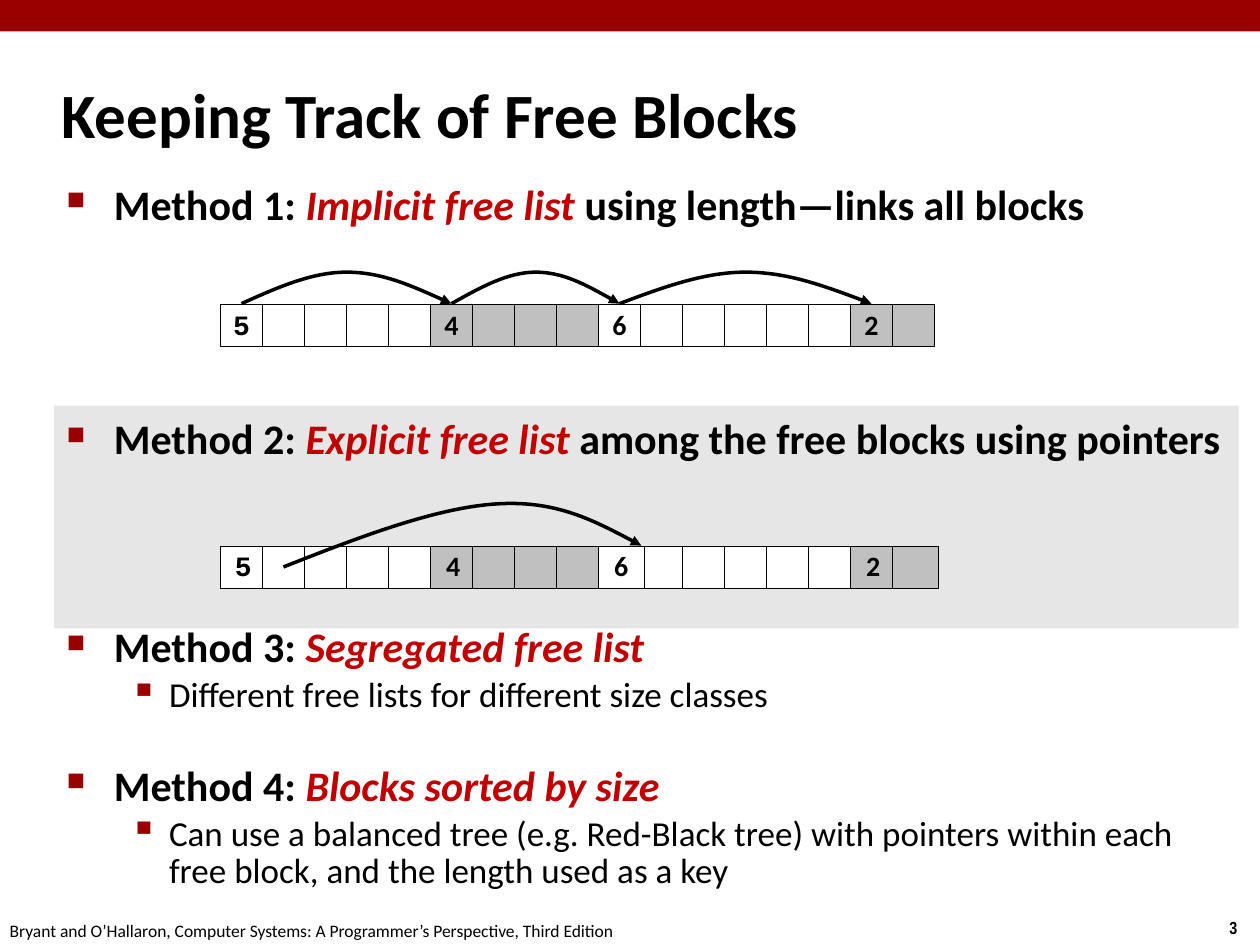
"""Build a slide on four ways of keeping track of free memory blocks."""
from lxml import etree
from pptx import Presentation
from pptx.dml.color import RGBColor
from pptx.enum.shapes import MSO_SHAPE
from pptx.enum.text import MSO_ANCHOR, MSO_AUTO_SIZE, PP_ALIGN
from pptx.oxml.ns import qn
from pptx.util import Pt

RECTANGLE = MSO_SHAPE.RECTANGLE
MIDDLE = MSO_ANCHOR.MIDDLE
NO_AUTOFIT = MSO_AUTO_SIZE.NONE
LEFT, CENTER = PP_ALIGN.LEFT, PP_ALIGN.CENTER

BLACK = RGBColor(0x00, 0x00, 0x00)
WHITE = RGBColor(0xFF, 0xFF, 0xFF)
GRAY = RGBColor(0xC0, 0xC0, 0xC0)
PANEL_GRAY = RGBColor(0xE6, 0xE6, 0xE6)
BAR_RED = RGBColor(0x99, 0x00, 0x00)
TERM_RED = RGBColor(0xC0, 0x00, 0x00)
FONT = "Calibri"

TITLE = "Keeping Track of Free Blocks"
FOOTER = "Bryant and O’Hallaron, Computer Systems: A Programmer’s Perspective, Third Edition"
PAGE_NUMBER = "3"

# level, space before, line spacing, (plain, term, plain)
POINTS = [
    (0, 0, 1, ("Method 1: ", "Implicit free list ", "using length—links all blocks")),
    (0, 105, 1, ("Method 2: ", "Explicit free list ", "among the free blocks using pointers")),
    (0, 95, 0.83, ("Method 3: ", "Segregated free list")),
    (1, 4, 0.88, ("Different free lists for different size classes",)),
    (0, 30, 0.83, ("Method 4: ", "Blocks sorted by size")),
    (1, 4, 0.88, ("Can use a balanced tree (e.g. Red-Black tree) with pointers within each "
                  "free block, and the length used as a key",)),
]
LEVELS = [
    {"size": 24, "bold": True, "bullet": "■", "scale": 60, "margin": 27, "hang": 27},
    {"size": 20, "bold": False, "bullet": "▪", "scale": 110, "margin": 58.5, "hang": 22.5},
]

BLOCKS = [(5, WHITE, "Courier New"), (4, GRAY, FONT), (6, WHITE, FONT), (2, GRAY, FONT)]
TOP_BLOCK = "6"
ROW_LEFT, CELL = 126, 24
IMPLICIT_TOP, EXPLICIT_TOP = 174, 312
IMPLICIT_WIDTH, EXPLICIT_WIDTH = 24, 26
ARROW_RISE = 18
EXPLICIT_ARROW = [(162, 324), (205.9, 306.7), (249.1, 290.2), (283.7, 288),
                  (317.5, 285.8), (342, 298.8), (366.5, 311.8)]


def add_span(para, text, size, color=BLACK, bold=False, italic=False, font=FONT):
    span = para.add_run()
    span.text = text
    span.font.name, span.font.size = font, Pt(size)
    span.font.bold, span.font.italic = bold, italic
    span.font.color.rgb = color


def add_box(slide, left, top, width, height, wrap):
    box = slide.shapes.add_textbox(Pt(left), Pt(top), Pt(width), Pt(height))
    box.text_frame.word_wrap = wrap
    return box.text_frame


def add_rectangle(slide, left, top, width, height, color, outlined=False):
    shape = slide.shapes.add_shape(RECTANGLE, Pt(left), Pt(top), Pt(width), Pt(height))
    shape.shadow.inherit = False
    shape.fill.solid()
    shape.fill.fore_color.rgb = color
    if outlined:
        shape.line.color.rgb = BLACK
        shape.line.width = Pt(0.25)
    else:
        shape.line.fill.background()
    return shape


def set_bullet(para, level):
    props = para._p.get_or_add_pPr()
    props.set("marL", str(Pt(level["margin"])))
    props.set("indent", str(-Pt(level["hang"])))
    color = etree.SubElement(props, qn("a:buClr"))
    etree.SubElement(color, qn("a:srgbClr"), val=str(BAR_RED))
    etree.SubElement(props, qn("a:buSzPct"), val=str(level["scale"] * 1000))
    etree.SubElement(props, qn("a:buChar"), char=level["bullet"])


def add_points(slide):
    frame = add_box(slide, 31, 98.6, 676.8, 423.4, True)
    for index, (depth, before, spacing, texts) in enumerate(POINTS):
        level = LEVELS[depth]
        para = frame.add_paragraph() if index else frame.paragraphs[0]
        para.level = depth
        para.space_before, para.line_spacing = Pt(before), spacing
        set_bullet(para, level)
        for position, text in enumerate(texts):
            is_term = position == 1
            add_span(para, text, level["size"], TERM_RED if is_term else BLACK,
                     level["bold"], is_term)


def block_cells():
    cells = []
    for length, color, font in BLOCKS:
        for offset in range(length):
            label = "" if offset else str(length)
            cells.append((len(cells), label, color, font))
    return sorted(cells, key=lambda cell: cell[1] == TOP_BLOCK)


def add_memory_row(slide, top, width):
    for column, label, color, font in block_cells():
        cell = add_rectangle(slide, ROW_LEFT + column * CELL, top, width, CELL, color, True)
        if label:
            frame = cell.text_frame
            frame.word_wrap, frame.vertical_anchor = False, MIDDLE
            para = frame.paragraphs[0]
            para.alignment, para.line_spacing = CENTER, 0.98
            add_span(para, label, 16, bold=True, font=font)


def add_curved_arrow(slide, points):
    start, *controls = [(Pt(x), Pt(y)) for x, y in points]
    builder = slide.shapes.build_freeform(*start)
    builder.add_line_segments(controls, close=False)
    arrow = builder.convert_to_shape()
    arrow.shadow.inherit = False
    arrow.fill.background()
    arrow.line.color.rgb = BLACK
    arrow.line.width = Pt(2)
    etree.SubElement(arrow.line._get_or_add_ln(), qn("a:tailEnd"), type="triangle")
    outline = next(arrow._element.iter(qn("a:path")))
    lines = outline.findall(qn("a:lnTo"))
    for first in range(0, len(lines), 3):
        curve = etree.SubElement(outline, qn("a:cubicBezTo"))
        for line in lines[first:first + 3]:
            curve.append(line[0])
            outline.remove(line)


def add_implicit_arrows(slide):
    start = ROW_LEFT + CELL / 2
    base = IMPLICIT_TOP - 0.5
    for length, _, _ in BLOCKS[:-1]:
        span = length * CELL
        rises = (0, 0.5, 1, 1, 1, 0.5, 0)
        add_curved_arrow(slide, [(start + span * step / 6, base - ARROW_RISE * rise)
                                 for step, rise in enumerate(rises)])
        start += span


def add_title(slide):
    title = slide.shapes.title
    title.left, title.top, title.width, title.height = Pt(28), Pt(34.5), Pt(597.6), Pt(60)
    frame = title.text_frame
    frame.word_wrap, frame.auto_size, frame.vertical_anchor = True, NO_AUTOFIT, MIDDLE
    frame.paragraphs[0].alignment = LEFT
    add_span(frame.paragraphs[0], TITLE, 36, bold=True)


def main():
    deck = Presentation()
    deck.slide_width, deck.slide_height = Pt(720), Pt(540)
    slide = deck.slides.add_slide(deck.slide_layouts[5])
    add_rectangle(slide, 0, 0, 720, 18, BAR_RED)
    number = add_box(slide, 695.5, 520.5, 24.5, 19.5, False)
    add_span(number.paragraphs[0], PAGE_NUMBER, 10, bold=True, font="Arial Narrow")
    footer = add_box(slide, -1.5, 522, 366, 19.5, False)
    add_span(footer.paragraphs[0], FOOTER, 10)
    add_rectangle(slide, 31, 231.8, 676.8, 127.4, PANEL_GRAY)
    add_title(slide)
    add_points(slide)
    add_memory_row(slide, IMPLICIT_TOP, IMPLICIT_WIDTH)
    add_implicit_arrows(slide)
    add_memory_row(slide, EXPLICIT_TOP, EXPLICIT_WIDTH)
    add_curved_arrow(slide, EXPLICIT_ARROW)
    deck.save("out.pptx")


if __name__ == "__main__":
    main()
